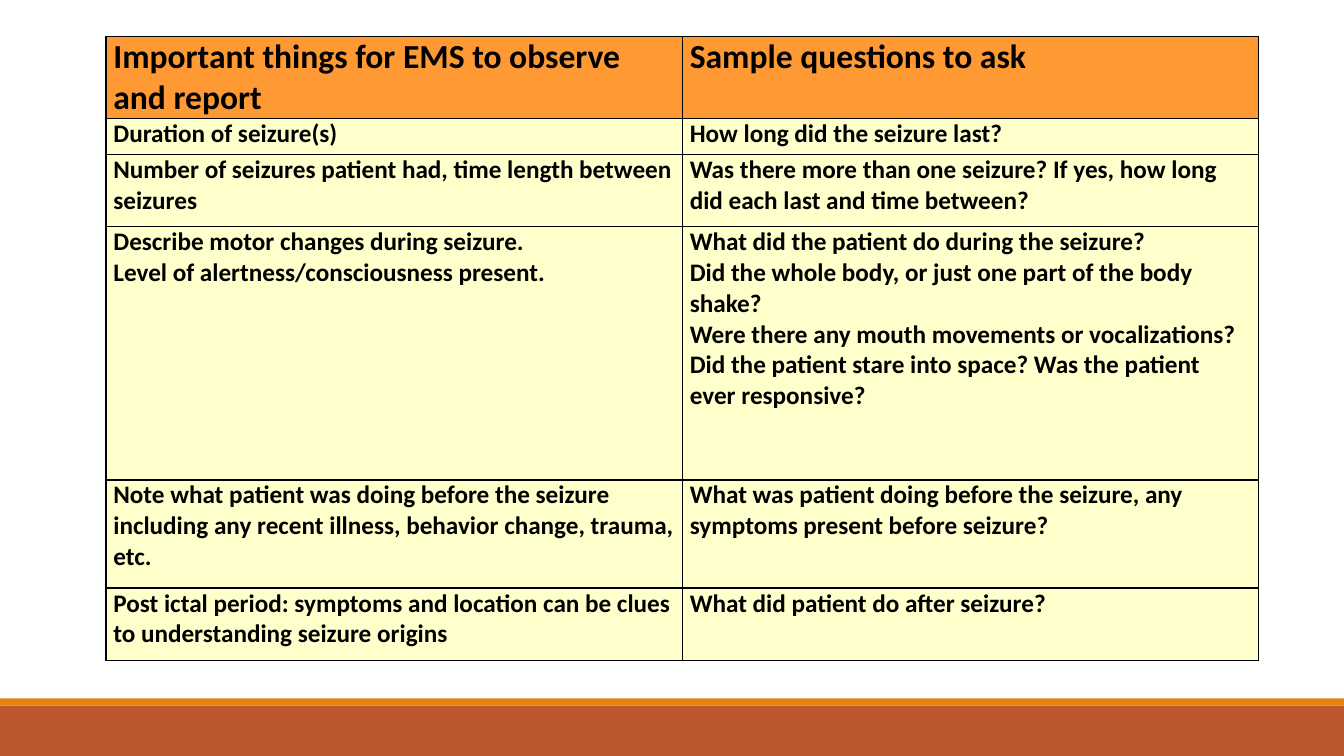
from pptx import Presentation as Deck
from pptx.dml.color import RGBColor as Rgb
from pptx.enum.shapes import MSO_SHAPE as Shape
from pptx.oxml.ns import qn
from pptx.util import Pt
from lxml.etree import SubElement as Sub

PX = 9525
WIDE, HIGH = 1280, 720


def paint(fill, hue):
    """Give a fill one solid colour."""
    fill.solid()
    fill.fore_color.rgb = Rgb.from_string(hue)


class Page:
    """Holds the style and the current slide."""

    font = {"name": "Calibri", "bold": True}
    inset = {"margin_left": 7 * PX, "margin_right": 7 * PX,
             "margin_top": 0, "margin_bottom": 0}
    flags = {"first_row": False, "horz_banding": False}
    ink = "000000"

    def __init__(self, deck):
        """Add a blank slide."""
        self.slide = deck.slides.add_slide(deck.slide_layouts[6])

    def apply(self, item, values):
        """Set attributes from a dict."""
        for key, value in values.items():
            setattr(item, key, value)

    def band(self, top, high, hue):
        """Draw a bar across the slide."""
        bar = self.slide.shapes.add_shape(
            Shape.RECTANGLE, 0, top * PX, WIDE * PX, high * PX)
        bar.shadow.inherit = False
        paint(bar.fill, hue)
        bar.line.fill.background()

    def edge(self, cell):
        """Draw the four borders of a cell."""
        props = cell._tc.get_or_add_tcPr()
        for side in "LRTB":
            line = Sub(props, qn(f"a:ln{side}"), w=str(Pt(1)))
            fill = Sub(line, qn("a:solidFill"))
            Sub(fill, qn("a:srgbClr"), val=self.ink)

    def cell(self, cell, text, size, hue):
        """Fill a cell with styled text."""
        self.apply(cell, self.inset)
        self.edge(cell)
        paint(cell.fill, hue)
        cell.text = text
        for para in cell.text_frame.paragraphs:
            for run in para.runs:
                self.apply(run.font, {**self.font, "size": Pt(size)})
                run.font.color.rgb = Rgb.from_string(self.ink)

    def table(self, left, top, wide, highs, rows):
        """Draw a table with a header row and equal columns."""
        count = len(rows[0])
        grid = self.slide.shapes.add_table(
            len(rows), count, left * PX, top * PX,
            wide * count * PX, sum(highs) * PX).table
        self.apply(grid, self.flags)
        for col in grid.columns:
            col.width = wide * PX
        for num, (high, texts) in enumerate(zip(highs, rows)):
            grid.rows[num].height = high * PX
            size, hue = (18, "FFFFCC") if num else (24, "FF9933")
            for cell, text in zip(grid.rows[num].cells, texts):
                self.cell(cell, text, size, hue)


ROWS = [
    ("Important things for EMS to observe and report",
     "Sample questions to ask"),
    ("Duration of seizure(s)", "How long did the seizure last?"),
    ("Number of seizures patient had, time length between seizures",
     "Was there more than one seizure? If yes, how long did each last "
     "and time between?"),
    ("Describe motor changes during seizure.\n"
     "Level of alertness/consciousness present.",
     "What did the patient do during the seizure?\n"
     "Did the whole body, or just one part of the body shake?\n"
     "Were there any mouth movements or vocalizations?\n"
     "Did the patient stare into space? Was the patient ever responsive?"),
    ("Note what patient was doing before the seizure including any recent "
     "illness, behavior change, trauma, etc.",
     "What was patient doing before the seizure, any symptoms present "
     "before seizure?"),
    ("Post ictal period: symptoms and location can be clues to "
     "understanding seizure origins",
     "What did patient do after seizure?"),
]


def main():
    """Build and save the slide."""
    deck = Deck()
    deck.slide_width, deck.slide_height = WIDE * PX, HIGH * PX
    page = Page(deck)
    page.band(672, 48, "BD582C")
    page.band(665, 7, "E48312")
    page.table(101, 35, 549, [78, 34, 69, 241, 103, 69], ROWS)
    deck.save("out.pptx")


if __name__ == "__main__":
    main()
